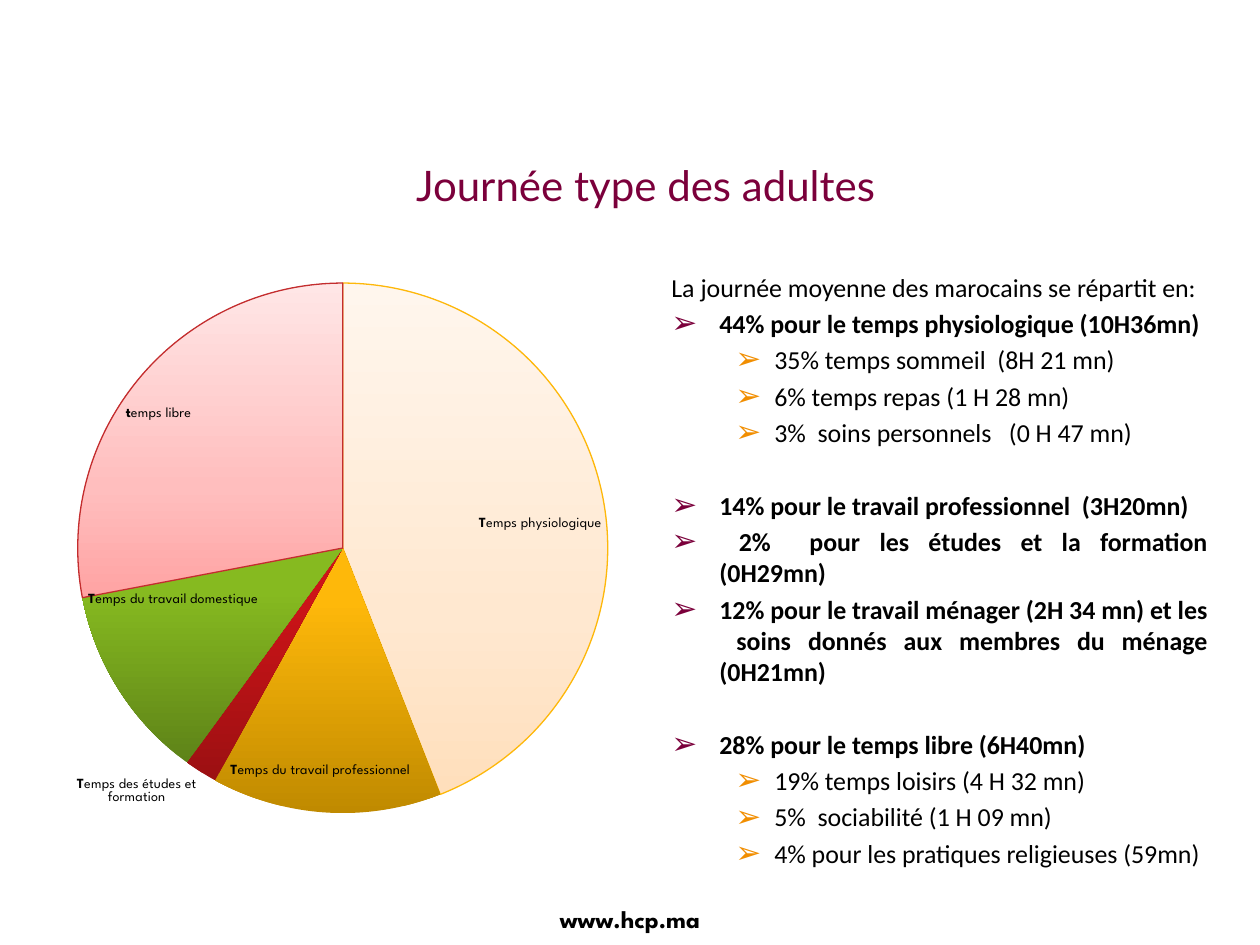
from dataclasses import dataclass
from typing import Optional

from pptx import Presentation
from pptx.chart.data import CategoryChartData
from pptx.dml.color import RGBColor
from pptx.enum.chart import XL_CHART_TYPE as ChartType, XL_LABEL_POSITION as LabelPosition
from pptx.enum.text import MSO_ANCHOR as Anchor, PP_ALIGN as Align
from pptx.oxml import parse_xml
from pptx.oxml.ns import nsdecls, qn
from pptx.util import Emu, Pt

PIXELS_PER_INCH = 126
BLACK = RGBColor(0x00, 0x00, 0x00)
PLUM = RGBColor(0x7B, 0x00, 0x3B)
ORANGE = RGBColor(0xF1, 0x8E, 0x00)
AMBER = RGBColor(0xFE, 0xB8, 0x0A)
AMBER_DARK = RGBColor(0xC0, 0x8A, 0x00)
RED = RGBColor(0xC3, 0x2D, 0x2E)
RED_BRIGHT = RGBColor(0xCD, 0x14, 0x18)
RED_DARK = RGBColor(0x9C, 0x10, 0x12)
GREEN = RGBColor(0x86, 0xBA, 0x20)
GREEN_DARK = RGBColor(0x5E, 0x83, 0x18)
PEACH = RGBColor(0xFF, 0xDF, 0xBC)
PEACH_MID = RGBColor(0xFF, 0xE8, 0xD0)
PEACH_LIGHT = RGBColor(0xFF, 0xF6, 0xED)
PINK = RGBColor(0xFF, 0xA3, 0xA3)
PINK_MID = RGBColor(0xFF, 0xBE, 0xBE)
PINK_LIGHT = RGBColor(0xFF, 0xE6, 0xE6)

CHART_WIDTH, CHART_HEIGHT = 620, 570
LINE_GAP, GROUP_GAP = 3, 24


@dataclass
class Slice:
    label: str
    value: int
    stops: dict[int, RGBColor]
    outline: Optional[RGBColor] = None
    position: LabelPosition = LabelPosition.INSIDE_END
    shift: Optional[tuple[int, int]] = None


@dataclass
class Level:
    number: int
    margin: int
    hanging: int
    bold: bool
    bullet: Optional[RGBColor]


@dataclass
class Item:
    text: str
    level: Level
    gap: int = LINE_GAP
    alignment: Align = Align.JUSTIFY


INTRO = Level(0, 48, 48, False, None)
MAIN = Level(0, 48, 48, True, PLUM)
DETAIL = Level(1, 103, 39, False, ORANGE)

SLICES = [
    Slice("Temps physiologique", 44, {0: PEACH, 35: PEACH_MID, 100: PEACH_LIGHT}, AMBER,
          shift=(6, 16)),
    Slice("Temps du travail professionnel", 14, {0: AMBER_DARK, 80: AMBER, 100: AMBER},
          shift=(-7, -28)),
    Slice("Temps des études et formation", 2, {0: RED_DARK, 80: RED_BRIGHT, 100: RED_BRIGHT},
          position=LabelPosition.OUTSIDE_END),
    Slice("Temps du travail domestique", 12, {0: GREEN_DARK, 80: GREEN, 100: GREEN},
          shift=(-35, -77)),
    Slice("temps libre", 28, {0: PINK, 35: PINK_MID, 100: PINK_LIGHT}, RED,
          shift=(-18, 25)),
]

ITEMS = [
    Item("La journée moyenne des marocains se répartit en:", INTRO, 0, Align.LEFT),
    Item("44% pour le temps physiologique (10H36mn)", MAIN, alignment=Align.LEFT),
    Item("35% temps sommeil  (8H 21 mn)", DETAIL),
    Item("6% temps repas (1 H 28 mn)", DETAIL),
    Item("3%  soins personnels   (0 H 47 mn)", DETAIL),
    Item("14% pour le travail professionnel  (3H20mn)", MAIN, GROUP_GAP),
    Item(" 2%  pour les études et la formation (0H29mn)", MAIN),
    Item("12% pour le travail ménager (2H 34 mn) et les  soins donnés aux membres "
         "du ménage (0H21mn)", MAIN),
    Item("28% pour le temps libre (6H40mn)", MAIN, GROUP_GAP),
    Item("19% temps loisirs (4 H 32 mn)", DETAIL),
    Item("5%  sociabilité (1 H 09 mn)", DETAIL),
    Item("4% pour les pratiques religieuses (59mn)", DETAIL),
]


def px(value: int) -> Emu:
    return Emu(round(value * 914400 / PIXELS_PER_INCH))


def set_font(font, color: RGBColor = BLACK, **values) -> None:
    for name, value in values.items():
        setattr(font, name, value)
    font.color.rgb = color


def add_text_frame(slide, left: int, top: int, width: int, height: int, anchor: Anchor):
    frame = slide.shapes.add_textbox(px(left), px(top), px(width), px(height)).text_frame
    frame.word_wrap = True
    frame.vertical_anchor = anchor
    return frame


def add_line(frame, text: str, color: RGBColor, **font_values) -> None:
    paragraph = frame.paragraphs[0]
    paragraph.alignment = Align.CENTER
    run = paragraph.add_run()
    run.text = text
    set_font(run.font, color, **font_values)


def write_item(paragraph, item: Item) -> None:
    level = item.level
    paragraph.alignment = item.alignment
    paragraph.level = level.number
    paragraph.space_before = Pt(item.gap)
    properties = paragraph._p.get_or_add_pPr()
    properties.set("marL", str(px(level.margin)))
    properties.set("indent", str(-px(level.hanging)))
    if level.bullet is not None:
        for element in (f'<a:buClr {nsdecls("a")}><a:srgbClr val="{level.bullet}"/></a:buClr>',
                        f'<a:buSzPct {nsdecls("a")} val="120000"/>',
                        f'<a:buFont {nsdecls("a")} typeface="Calibri"/>',
                        f'<a:buChar {nsdecls("a")} char="➢"/>'):
            properties.append(parse_xml(element))
    run = paragraph.add_run()
    run.text = item.text
    set_font(run.font, name="Calibri", size=Pt(14.8), bold=level.bold)


def manual_layout(**values):
    children = "".join(f'<c:{name} val="{value}"/>' for name, value in values.items())
    return parse_xml(f'<c:layout {nsdecls("c")}><c:manualLayout>{children}'
                     '</c:manualLayout></c:layout>')


def format_slice(point, part: Slice) -> None:
    stops = "".join(f'<a:gs pos="{place * 1000}"><a:srgbClr val="{color}"/></a:gs>'
                    for place, color in part.stops.items())
    point.format.fill._xPr.insert(0, parse_xml(
        f'<a:gradFill {nsdecls("a")}><a:gsLst>{stops}</a:gsLst>'
        '<a:lin ang="16200000" scaled="0"/></a:gradFill>'))
    if part.outline is None:
        point.format.line.fill.background()
    else:
        point.format.line.color.rgb = part.outline
        point.format.line.width = Pt(0.75)
    label = point.data_label
    paragraph = label.text_frame.paragraphs[0]
    for text, bold in ((part.label[0], True), (part.label[1:], False)):
        run = paragraph.add_run()
        run.text = text
        set_font(run.font, name="League Spartan", size=Pt(8), bold=bold)
    label.position = part.position
    if part.shift is not None:
        across, down = part.shift
        label._dLbl.insert(1, manual_layout(x=round(across / CHART_WIDTH, 2),
                                            y=round(down / CHART_HEIGHT, 2)))


def add_pie(slide) -> None:
    data = CategoryChartData()
    data.categories = [part.label for part in SLICES]
    data.add_series("Series 1", [part.value for part in SLICES])
    chart = slide.shapes.add_chart(ChartType.PIE, px(39), px(266), px(CHART_WIDTH),
                                   px(CHART_HEIGHT), data).chart
    chart.has_title = False
    chart.has_legend = False
    set_font(chart.font, name="League Spartan", size=Pt(18))
    plot = chart.plots[0]
    plot.vary_by_categories = True
    plot_area = chart._chartSpace.chart.plotArea
    for layout in plot_area.findall(qn("c:layout")):
        plot_area.remove(layout)
    plot_area.insert(0, manual_layout(layoutTarget="inner", xMode="edge", yMode="edge",
                                      x=0.06, y=0.03, w=0.86, h=0.93))
    for index, part in enumerate(SLICES):
        format_slice(plot.series[0].points[index], part)
    for leader in plot_area.iter(qn("c:showLeaderLines")):
        leader.set("val", "0")


def main() -> None:
    presentation = Presentation()
    presentation.slide_width, presentation.slide_height = px(1260), px(945)
    slide = presentation.slides.add_slide(presentation.slide_layouts[6])
    footer = add_text_frame(slide, 481, 899, 298, 41, Anchor.BOTTOM)
    add_line(footer, "www.hcp.ma", BLACK, name="League Spartan", size=Pt(14), bold=True)
    title = add_text_frame(slide, 164, 106, 963, 157, Anchor.MIDDLE)
    add_line(title, "Journée type des adultes", PLUM, name="Lato", size=Pt(24))
    add_pie(slide)
    body = add_text_frame(slide, 659, 265, 561, 588, Anchor.TOP)
    for index, item in enumerate(ITEMS):
        write_item(body.add_paragraph() if index else body.paragraphs[0], item)
    presentation.save("out.pptx")


if __name__ == "__main__":
    main()
